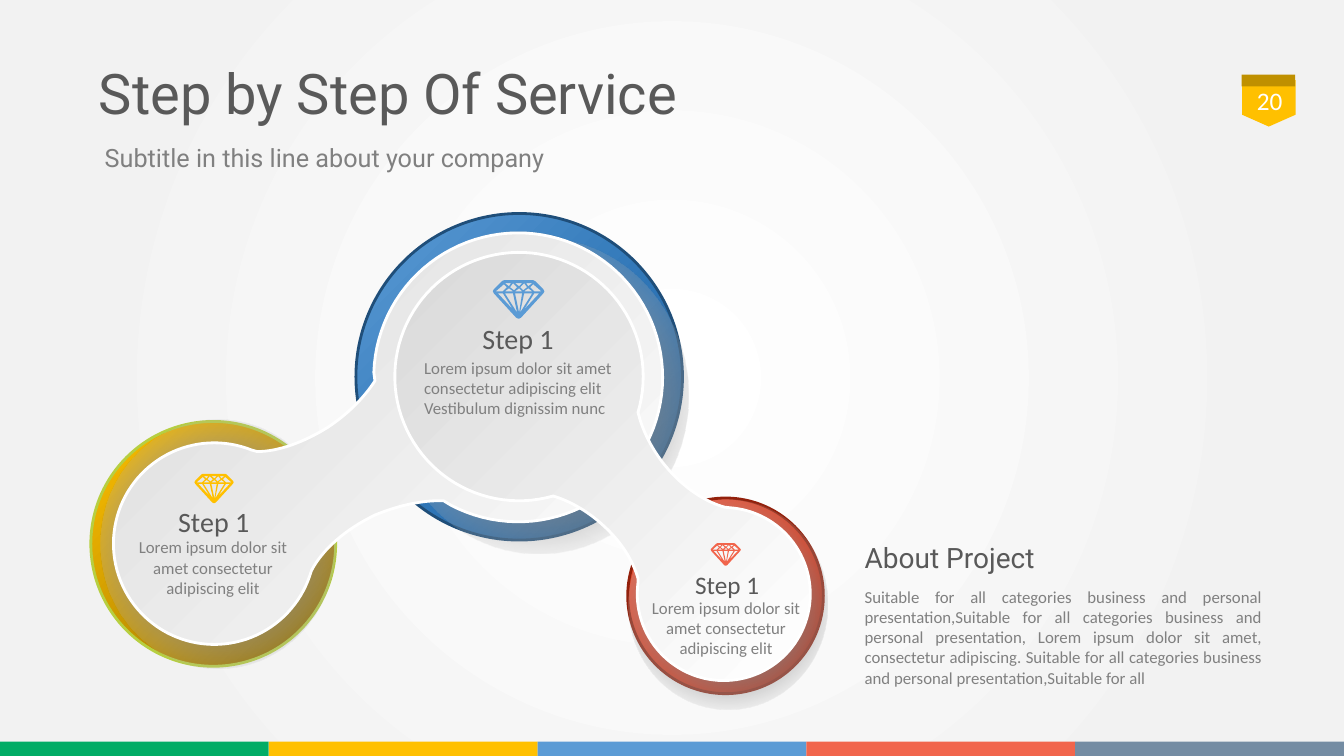
from math import atan2, cos, pi, sin

from pptx import Presentation
from pptx.dml.color import RGBColor
from pptx.enum.shapes import MSO_SHAPE
from pptx.enum.text import MSO_ANCHOR, MSO_AUTO_SIZE, PP_ALIGN
from pptx.oxml import parse_xml
from pptx.oxml.ns import nsdecls
from pptx.util import Cm, Pt

DARK, GREY, WHITE = "595959", "808080", "FFFFFF"
GREEN, GOLD, BLUE, RED, SLATE = "00AC65", "FFC000", "5B9BD5", "F1654C", "748CA3"
SLIDE_WIDTH, SLIDE_HEIGHT = 33.87, 19.05

DIAGONAL = '<a:lin ang="13500000" scaled="0"/>'
FROM_CENTRE = '<a:path path="circle"><a:fillToRect l="50000" t="50000" r="50000" b="50000"/></a:path>'
FROM_CORNER = '<a:path path="circle"><a:fillToRect r="100000" b="100000"/></a:path>'
SHADE = [(33, "717171", 100), (82, "BFBFBF", 0), (100, WHITE, 100)]

DIAMOND_WIDTH = 51
DIAMOND_OUTLINE = [(11, 0), (40, 0), (42, 1), (50, 9), (51, 11), (50, 13), (28, 37),
                   (26, 38), (25, 38), (23, 37), (1, 13), (0, 11), (1, 9), (9, 1)]
CENTRE_FACETS = [[(26, 6), (22, 3), (29, 3)], [(26, 8), (22, 11), (29, 11)],
                 [(29, 13), (26, 32), (22, 13)]]
LEFT_FACETS = [[(11, 4), (14, 7), (10, 11), (3, 11)], [(10, 13), (5, 13), (20, 29)],
               [(20, 13), (24, 32), (12, 13)], [(16, 8), (20, 11), (12, 11)],
               [(16, 6), (12, 3), (18, 3)], [(21, 10), (17, 7), (20, 3), (24, 7)]]

SHORT_TEXT = "Lorem ipsum dolor sit amet consectetur adipiscing elit"
ABOUT_TEXT = ("Suitable for all categories business and personal presentation,Suitable for all "
              "categories business and personal presentation, Lorem ipsum dolor sit amet, "
              "consectetur adipiscing. Suitable for all categories business and personal "
              "presentation,Suitable for all")


def rgb(color):
    return RGBColor.from_string(color)


def set_gradient(fill, properties, stops, direction):
    fill.solid()
    fill.fore_color.rgb = rgb(WHITE)
    stop_xml = "".join(
        f'<a:gs pos="{position * 1000}"><a:srgbClr val="{color}">'
        f'<a:alpha val="{alpha * 1000}"/></a:srgbClr></a:gs>'
        for position, color, alpha in stops)
    gradient = parse_xml(f'<a:gradFill {nsdecls("a")} rotWithShape="0">'
                         f'<a:gsLst>{stop_xml}</a:gsLst>{direction}</a:gradFill>')
    solid = properties.xpath("./a:solidFill")[0]
    properties.replace(solid, gradient)


def set_style(shape, fill=None, line=None):
    shape.shadow.inherit = False
    if fill:
        shape.fill.solid()
        shape.fill.fore_color.rgb = rgb(fill)
    if line:
        shape.line.color.rgb = rgb(line)
        shape.line.width = Pt(2)
    else:
        shape.line.fill.background()


def add_block(slide, kind, box, fill=None, line=None):
    shape = slide.shapes.add_shape(kind, *map(Cm, box))
    set_style(shape, fill, line)
    return shape


def add_ring(slide, box, colors, line):
    ring = add_block(slide, MSO_SHAPE.OVAL, box, line=line)
    stops = [(position, color, 100) for position, color in zip((0, 43, 100), colors)]
    set_gradient(ring.fill, ring._element.spPr, stops, DIAGONAL)


def add_shade(slide, box):
    shade = add_block(slide, MSO_SHAPE.OVAL, box)
    set_gradient(shade.fill, shade._element.spPr, SHADE, FROM_CENTRE)


def curve(points, steps=16):
    result = []
    for start in range(0, len(points) - 1, 3):
        a, b, c, d = points[start:start + 4]
        for step in range(steps + 1):
            t = step / steps
            u = 1 - t
            result.append(tuple(u**3 * a[i] + 3 * u * u * t * b[i] + 3 * u * t * t * c[i]
                                + t**3 * d[i] for i in (0, 1)))
    return result


def arc(circle, start, end, steps=90):
    x, y, radius = circle
    first = atan2(start[1] - y, start[0] - x)
    sweep = (atan2(end[1] - y, end[0] - x) - first) % (2 * pi)
    angles = [first + sweep * step / steps for step in range(1, steps)]
    return [(x + radius * cos(angle), y + radius * sin(angle)) for angle in angles]


def add_bridge(slide, large, small, neck_out, neck_back):
    outline = (curve(neck_out) + arc(small, neck_out[-1], neck_back[0])
               + curve(neck_back) + arc(large, neck_back[-1], neck_out[0]))
    points = [(Cm(x), Cm(y)) for x, y in outline]
    builder = slide.shapes.build_freeform(*points[0])
    builder.add_line_segments(points[1:], close=True)
    bridge = builder.convert_to_shape()
    set_style(bridge, line=WHITE)
    set_gradient(bridge.fill, bridge._element.spPr,
                 [(0, "D9D9D9", 100), (100, WHITE, 100)], FROM_CORNER)


def add_diamond(slide, left, top, width, color):
    mirrored = [[(DIAMOND_WIDTH - x, y) for x, y in facet] for facet in LEFT_FACETS]
    builder = slide.shapes.build_freeform(*DIAMOND_OUTLINE[0], scale=Cm(width) / DIAMOND_WIDTH)
    builder.add_line_segments(DIAMOND_OUTLINE[1:], close=True)
    for facet in CENTRE_FACETS + LEFT_FACETS + mirrored:
        builder.move_to(*facet[0])
        builder.add_line_segments(facet[1:], close=True)
    set_style(builder.convert_to_shape(Cm(left), Cm(top)), color)


def format_text(shape, text, size, color, font, align=PP_ALIGN.LEFT,
                anchor=MSO_ANCHOR.TOP, wrap=True):
    frame = shape.text_frame
    frame.text = text
    frame.auto_size = MSO_AUTO_SIZE.NONE
    frame.word_wrap = wrap
    frame.vertical_anchor = anchor
    paragraph = frame.paragraphs[0]
    paragraph.alignment = align
    paragraph.font.size = Pt(size)
    paragraph.font.name = font
    paragraph.font.color.rgb = rgb(color)
    return paragraph


def add_text(slide, box, text, size, color, font="Calibri", **options):
    return format_text(slide.shapes.add_textbox(*map(Cm, box)), text, size, color, font, **options)


def add_title(slide, text):
    title = slide.shapes.title
    title.left, title.top, title.width, title.height = map(Cm, (2.24, 1.42, 29.72, 2.03))
    paragraph = format_text(title, text, 40, DARK, "Roboto", anchor=MSO_ANCHOR.MIDDLE)
    paragraph.line_spacing = 0.9


def add_frame(slide):
    set_gradient(slide.background.fill, slide._element.xpath(".//p:bgPr")[0],
                 [(0, WHITE, 100), (81, "F2F2F2", 100), (100, "F2F2F2", 100)], FROM_CENTRE)
    flag = add_block(slide, MSO_SHAPE.PENTAGON, (31.39, 1.93, 1.17, 1.35), GOLD)
    flag.rotation = 90
    flag.adjustments[0] = 0.255
    add_block(slide, MSO_SHAPE.RECTANGLE, (31.29, 1.88, 1.35, 0.3), "BF9000")
    bars = [GREEN, GOLD, BLUE, RED, SLATE]
    width = SLIDE_WIDTH / len(bars)
    for index, color in enumerate(bars):
        add_block(slide, MSO_SHAPE.RECTANGLE, (index * width, 18.69, width, 0.36), color)
    add_text(slide, (31.22, 1.88, 1.55, 1.32), "20", 18, WHITE,
             align=PP_ALIGN.CENTER, anchor=MSO_ANCHOR.MIDDLE)


def add_circles(slide):
    add_ring(slide, (2.29, 10.62, 6.17, 6.17), ("806000", "BF9000", GOLD), "B7CF41")
    add_shade(slide, (2.54, 10.57, 5.92, 6.27))
    add_ring(slide, (15.82, 12.55, 4.93, 4.93), ("93200B", "DD3011", RED), "93200B")
    add_shade(slide, (15.85, 12.6, 5, 5.28))
    add_ring(slide, (8.97, 5.38, 8.23, 8.23), ("1F4E79", "2E75B6", BLUE), "1F4E79")
    add_shade(slide, (9.83, 5.99, 7.52, 7.95))
    add_shade(slide, (9.47, 5.84, 7.21, 7.29))
    add_bridge(slide, (13.06, 9.51, 3.64), (5.4, 13.7, 2.54),
               [(11.18, 12.62), (10.67, 12.6), (10.06, 12.73), (9.45, 12.98),
                (8.71, 13.34), (8.13, 13.84), (7.85, 14.38)],
               [(6.48, 11.38), (7.01, 11.38), (7.65, 11.15), (8.26, 10.77),
                (8.76, 10.44), (9.17, 10.03), (9.45, 9.6)])
    add_bridge(slide, (13.08, 9.49, 3.13), (18.24, 14.97, 2.18),
               [(16.08, 10.39), (16.18, 10.82), (16.41, 11.3), (16.76, 11.73),
                (17.22, 12.29), (17.78, 12.65), (18.26, 12.78)],
               [(16.08, 14.58), (15.95, 14.12), (15.65, 13.64), (15.19, 13.23),
                (14.81, 12.88), (14.35, 12.62), (13.94, 12.5)])


def add_step(slide, diamond, color, label_box, label_size, text_box, text, align):
    add_diamond(slide, *diamond, color)
    add_text(slide, label_box, "Step 1", label_size, DARK, wrap=False)
    add_text(slide, text_box, text, 12, GREY, align=align)


def main():
    presentation = Presentation()
    presentation.slide_width, presentation.slide_height = Cm(SLIDE_WIDTH), Cm(SLIDE_HEIGHT)
    slide = presentation.slides.add_slide(presentation.slide_layouts[5])
    add_frame(slide)
    add_title(slide, "Step by Step Of Service")
    add_circles(slide)
    add_text(slide, (2.39, 3.45, 14.68, 1.02), "Subtitle in this line about your company",
             18, GREY, "Roboto")
    add_step(slide, (12.42, 7.06, 1.3), BLUE, (11.91, 7.98, 2.34, 1.12), 20,
             (10.44, 8.89, 5.28, 1.8), SHORT_TEXT + " Vestibulum dignissim nunc", PP_ALIGN.LEFT)
    add_step(slide, (4.9, 11.94, 0.99), GOLD, (4.24, 12.6, 2.34, 1.12), 20,
             (2.97, 13.41, 4.8, 1.8), SHORT_TEXT, PP_ALIGN.CENTER)
    add_step(slide, (17.91, 13.69, 0.76), RED, (17.27, 14.22, 2.13, 1.02), 18,
             (15.9, 14.94, 4.8, 1.8), SHORT_TEXT, PP_ALIGN.CENTER)
    add_text(slide, (21.54, 13.49, 11, 1.12), "About Project", 20, DARK, "Roboto")
    add_text(slide, (21.54, 14.66, 10.52, 2.82), ABOUT_TEXT, 12, GREY, align=PP_ALIGN.JUSTIFY)
    presentation.save("out.pptx")


if __name__ == "__main__":
    main()
